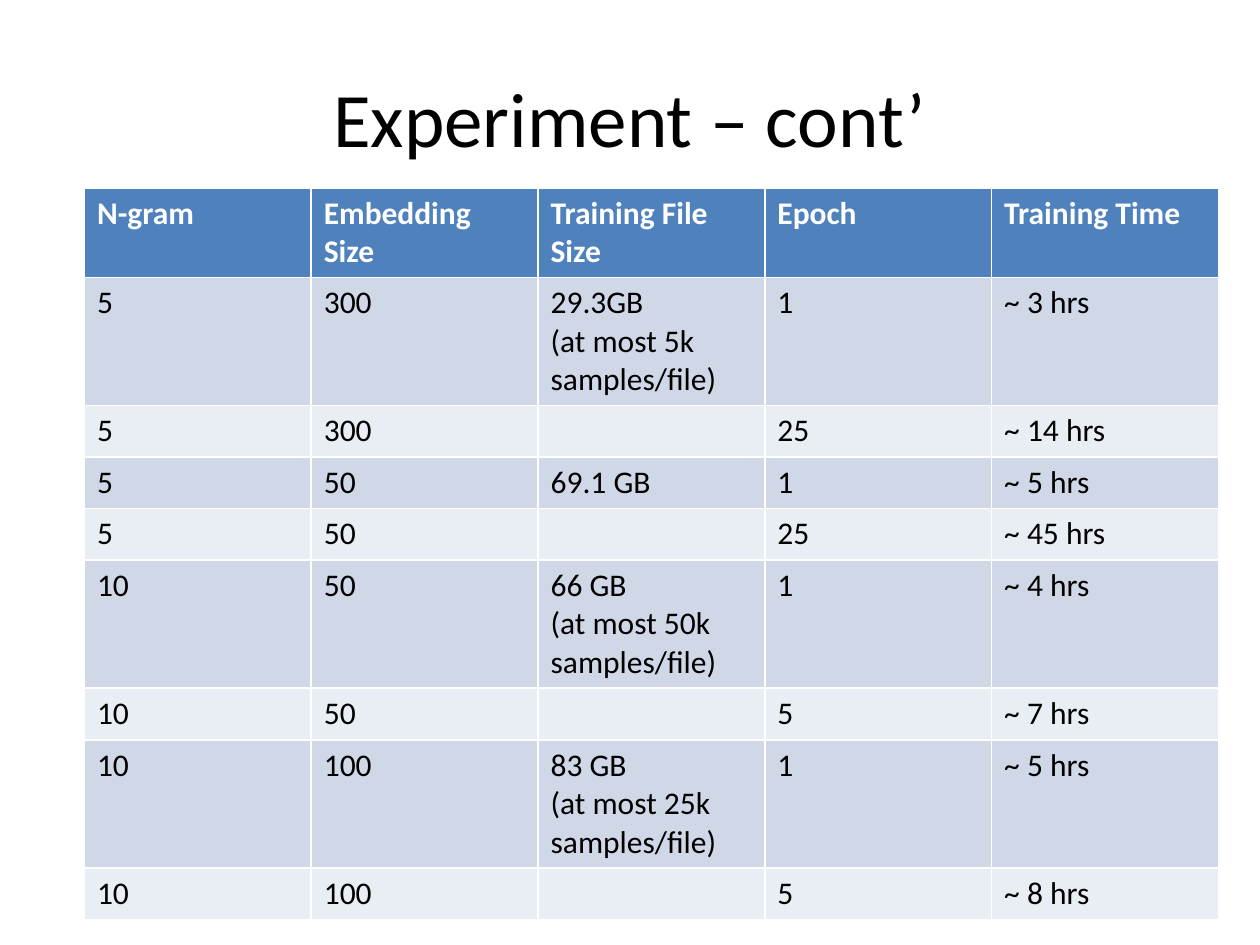
from pptx import Presentation
from pptx.dml.color import RGBColor
from pptx.enum.text import MSO_ANCHOR, PP_ALIGN
from pptx.util import Inches, Pt


def style(paragraph, size, color, bold=False):
    font = paragraph.font
    font.name, font.size, font.bold = "Calibri", Pt(size), bold
    font.color.rgb = RGBColor.from_string(color)


ROWS = [
    ["N-gram", "Embedding Size", "Training File Size", "Epoch", "Training Time"],
    ["5", "300", "29.3GB\n(at most 5k samples/file)", "1", "~ 3 hrs"],
    ["5", "300", "", "25", "~ 14 hrs"],
    ["5", "50", "69.1 GB", "1", "~ 5 hrs"],
    ["5", "50", "", "25", "~ 45 hrs"],
    ["10", "50", "66 GB\n(at most 50k samples/file)", "1", "~ 4 hrs"],
    ["10", "50", "", "5", "~ 7 hrs"],
    ["10", "100", "83 GB\n(at most 25k samples/file)", "1", "~ 5 hrs"],
    ["10", "100", "", "5", "~ 8 hrs"],
]
HEADER_FILL = "4F81BD"
BAND_FILLS = ["E9EDF4", "D0D8E8"]
ROW_HEIGHT = Inches(0.41)

presentation = Presentation()
presentation.slide_width, presentation.slide_height = Inches(10), Inches(7.5)
width, height = presentation.slide_width, presentation.slide_height
slide = presentation.slides.add_slide(presentation.slide_layouts[5])

title = slide.shapes.title
title.left, title.top = int(width * 0.05), int(height * 0.04)
title.width, title.height = int(width * 0.9), Inches(1.25)
title.text_frame.text = "Experiment – cont’"
title.text_frame.vertical_anchor = MSO_ANCHOR.MIDDLE
title_paragraph = title.text_frame.paragraphs[0]
title_paragraph.alignment = PP_ALIGN.CENTER
style(title_paragraph, 44, "000000")

table = slide.shapes.add_table(
    len(ROWS), len(ROWS[0]), Inches(0.67), Inches(1.49),
    int(width * 0.9), ROW_HEIGHT * len(ROWS)).table

for row_index, texts in enumerate(ROWS):
    table.rows[row_index].height = ROW_HEIGHT
    header = row_index == 0
    fill = HEADER_FILL if header else BAND_FILLS[row_index % 2]
    for column_index, text in enumerate(texts):
        cell = table.cell(row_index, column_index)
        cell.text = text
        cell.fill.solid()
        cell.fill.fore_color.rgb = RGBColor.from_string(fill)
        for paragraph in cell.text_frame.paragraphs:
            style(paragraph, 18, "FFFFFF" if header else "000000", header)

presentation.save("out.pptx")
